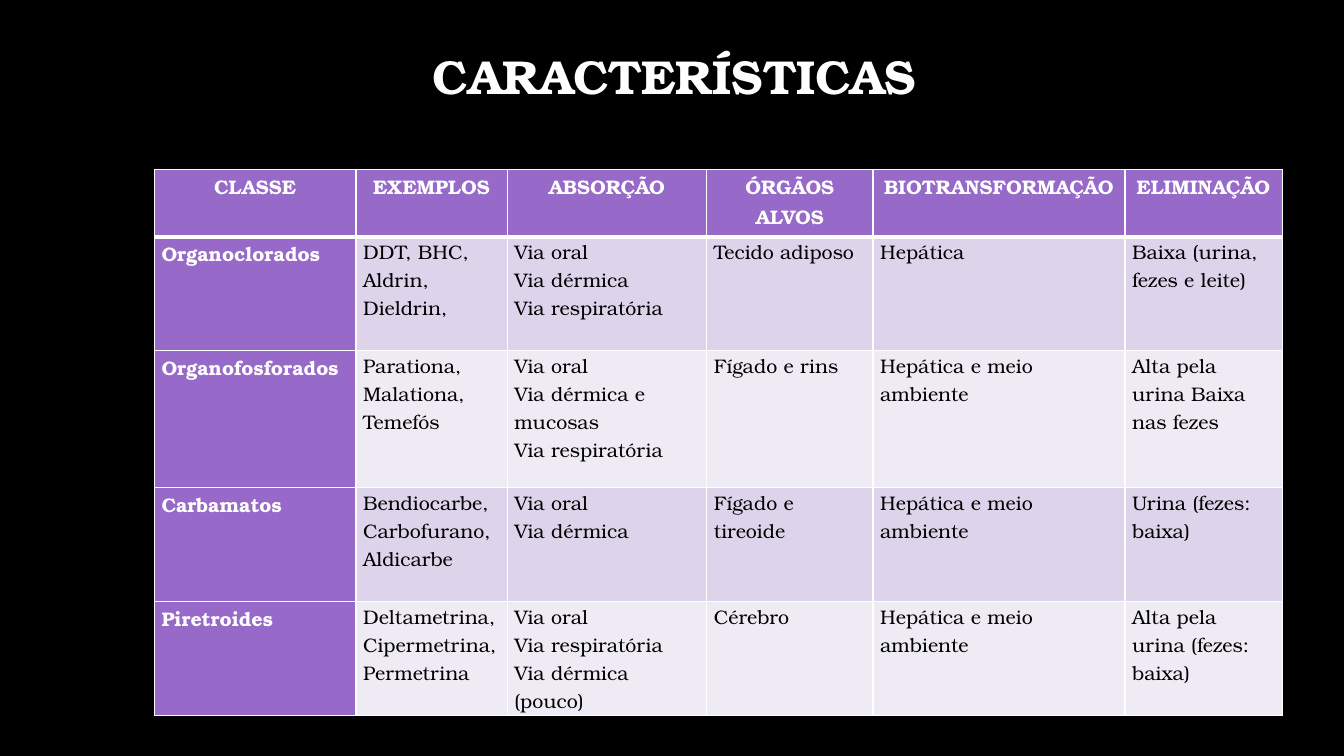
from pptx import Presentation
from pptx.dml.color import RGBColor
from pptx.enum.text import MSO_ANCHOR, PP_ALIGN
from pptx.oxml import parse_xml
from pptx.oxml.ns import nsdecls
from pptx.util import Cm, Pt

TITLE = "CARACTERÍSTICAS"
HEADS = ["CLASSE", "EXEMPLOS", "ABSORÇÃO", "ÓRGÃOS ALVOS",
         "BIOTRANSFORMAÇÃO", "ELIMINAÇÃO"]
# Each newline starts a new paragraph
BODY = [
    ["Organoclorados", "DDT, BHC, Aldrin, Dieldrin,",
     "Via oral\nVia dérmica\nVia respiratória",
     "Tecido adiposo", "Hepática", "Baixa (urina, fezes e leite)"],
    ["Organofosforados", "Parationa, Malationa, Temefós",
     "Via oral\nVia dérmica e mucosas\nVia respiratória",
     "Fígado e rins", "Hepática e meio ambiente",
     "Alta pela urina Baixa nas fezes"],
    ["Carbamatos", "Bendiocarbe, Carbofurano, Aldicarbe",
     "Via oral\nVia dérmica",
     "Fígado e tireoide", "Hepática e meio ambiente",
     "Urina (fezes: baixa)"],
    ["Piretroides", "Deltametrina, Cipermetrina, Permetrina",
     "Via oral\nVia respiratória\nVia dérmica (pouco)",
     "Cérebro", "Hepática e meio ambiente",
     "Alta pela urina (fezes: baixa)"],
]
WIDTHS = [5.08, 3.81, 5.03, 4.19, 6.35, 3.96]
HEIGHTS = [1.7, 2.87, 3.45, 2.87, 2.87]
FONT = "TeX Gyre Bonum"
COLORS = {"back": "000000", "light": "FFFFFF", "dark": "000000",
          "head": "976AC9", "odd": "DDD4EB", "even": "EFEBF5"}


def color(name):
    return RGBColor.from_string(COLORS[name])


def write(par, text, size, tone, bold, align, space):
    par.alignment = align
    par.line_spacing = space
    run = par.add_run()
    run.text = text
    font = run.font
    font.name, font.size, font.bold = FONT, Pt(size), bold
    font.color.rgb = color(tone)


def border(cell, row):
    """Draw thin lines around a cell, thick ones under the header."""
    thick = {"T": row == 1, "B": row == 0}
    props = cell._tc.get_or_add_tcPr()
    for side in "LRTB":
        width = Pt(3 if thick.get(side) else 1)
        props.append(parse_xml(
            f'<a:ln{side} {nsdecls("a")} w="{width}"><a:solidFill>'
            f'<a:srgbClr val="{COLORS["light"]}"/></a:solidFill></a:ln{side}>'))


def fill_cell(cell, text, row, col):
    head = row == 0 or col == 0
    cell.margin_left = cell.margin_right = Cm(0.18)
    cell.margin_top = cell.margin_bottom = 0
    border(cell, row)
    cell.fill.solid()
    cell.fill.fore_color.rgb = color(
        "head" if head else "odd" if row % 2 else "even")
    frame = cell.text_frame
    for i, line in enumerate(text.split("\n")):
        par = frame.add_paragraph() if i else frame.paragraphs[0]
        write(par, line, 14, "light" if head else "dark", head,
              PP_ALIGN.LEFT if row else PP_ALIGN.CENTER, 1.07)


def main():
    deck = Presentation()
    deck.slide_width, deck.slide_height = Cm(33.87), Cm(19.05)
    slide = deck.slides.add_slide(deck.slide_layouts[5])
    slide.background.fill.solid()
    slide.background.fill.fore_color.rgb = color("back")

    title = slide.shapes.title
    title.left, title.top = Cm(7.01), Cm(0.99)
    title.width, title.height = Cm(19.99), Cm(2)
    title.text_frame.vertical_anchor = MSO_ANCHOR.MIDDLE
    write(title.text_frame.paragraphs[0], TITLE, 34, "light", True,
          PP_ALIGN.CENTER, 0.9)

    rows = [HEADS] + BODY
    table = slide.shapes.add_table(
        len(rows), len(HEADS), Cm(3.89), Cm(4.27),
        Cm(sum(WIDTHS)), Cm(sum(HEIGHTS))).table
    table.first_col = True
    for column, width in zip(table.columns, WIDTHS):
        column.width = Cm(width)
    for line, height in zip(table.rows, HEIGHTS):
        line.height = Cm(height)
    for r, texts in enumerate(rows):
        for c, text in enumerate(texts):
            fill_cell(table.cell(r, c), text, r, c)

    deck.save("out.pptx")


if __name__ == "__main__":
    main()
